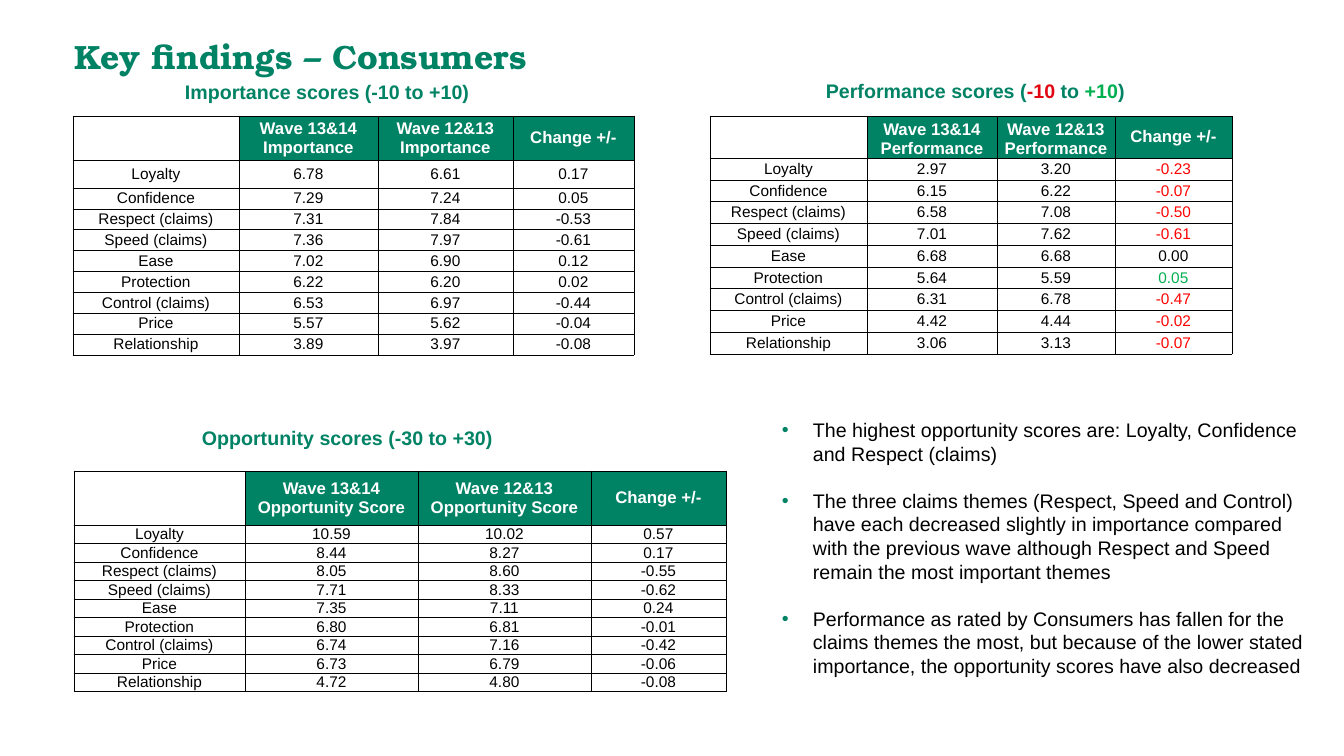
from pptx import Presentation
from pptx.dml.color import RGBColor
from pptx.enum.text import MSO_ANCHOR as Anchor, PP_ALIGN as Align
from pptx.oxml.ns import qn
from pptx.util import Pt
from lxml.etree import SubElement

COLOURS = {
    "brand": "008265", "header_text": "FFFFFF", "body": "000000",
    "fall": "FF0000", "rise": "00B050", "minimum": "E20613",
}

THEMES = ["Loyalty", "Confidence", "Respect (claims)", "Speed (claims)", "Ease",
          "Protection", "Control (claims)", "Price", "Relationship"]

# One line per theme: latest wave, previous wave, change
IMPORTANCE = [
    ("6.78", "6.61", "0.17"), ("7.29", "7.24", "0.05"), ("7.31", "7.84", "-0.53"),
    ("7.36", "7.97", "-0.61"), ("7.02", "6.90", "0.12"), ("6.22", "6.20", "0.02"),
    ("6.53", "6.97", "-0.44"), ("5.57", "5.62", "-0.04"), ("3.89", "3.97", "-0.08"),
]
PERFORMANCE = [
    ("2.97", "3.20", "-0.23"), ("6.15", "6.22", "-0.07"), ("6.58", "7.08", "-0.50"),
    ("7.01", "7.62", "-0.61"), ("6.68", "6.68", "0.00"), ("5.64", "5.59", "0.05"),
    ("6.31", "6.78", "-0.47"), ("4.42", "4.44", "-0.02"), ("3.06", "3.13", "-0.07"),
]
OPPORTUNITY = [
    ("10.59", "10.02", "0.57"), ("8.44", "8.27", "0.17"), ("8.05", "8.60", "-0.55"),
    ("7.71", "8.33", "-0.62"), ("7.35", "7.11", "0.24"), ("6.80", "6.81", "-0.01"),
    ("6.74", "7.16", "-0.42"), ("6.73", "6.79", "-0.06"), ("4.72", "4.80", "-0.08"),
]

FINDINGS = [
    "The highest opportunity scores are: Loyalty, Confidence and Respect (claims)",
    "The three claims themes (Respect, Speed and Control) have each decreased slightly "
    "in importance compared with the previous wave although Respect and Speed remain "
    "the most important themes",
    "Performance as rated by Consumers has fallen for the claims themes the most, but "
    "because of the lower stated importance, the opportunity scores have also decreased",
]


def px(length):
    return round(length * 914400 / 100.8)


def colour(name):
    return RGBColor.from_string(COLOURS[name])


def style(font, size, shade, bold=False, face="Arial"):
    font.name, font.size, font.bold = face, Pt(size), bold
    font.color.rgb = colour(shade)


def add_box(slide, left, top, width, height):
    box = slide.shapes.add_textbox(px(left), px(top), px(width), px(height))
    return box.text_frame


def add_title(slide, text):
    title = add_box(slide, 74, 7, 797, 98)
    title.word_wrap = True
    title.vertical_anchor = Anchor.MIDDLE
    title.margin_left = title.margin_right = title.margin_top = title.margin_bottom = 0
    title.text = text
    style(title.paragraphs[0].font, 24, "brand", True, "TeX Gyre Bonum")


def add_heading(slide, left, top, width, *parts):
    """Each part is a (text, colour name) pair."""
    heading = add_box(slide, left, top, width, 34)
    heading.word_wrap = False
    line = heading.paragraphs[0]
    style(line.font, 14, "brand", True)
    for text, shade in parts:
        run = line.add_run()
        run.text = text
        if len(parts) > 1:
            style(run.font, 14, shade, True)


def add_borders(cell):
    properties = cell._tc.get_or_add_tcPr()
    for side in ("a:lnL", "a:lnR", "a:lnT", "a:lnB"):
        edge = SubElement(properties, qn(side), w=str(Pt(0.5)))
        fill = SubElement(edge, qn("a:solidFill"))
        SubElement(fill, qn("a:srgbClr"), val=COLOURS["body"])


def fill_cell(cell, text, size, shade, bold=False, anchor=Anchor.MIDDLE):
    add_borders(cell)
    if bold and text:
        cell.fill.solid()
        cell.fill.fore_color.rgb = colour("brand")
    else:
        cell.fill.background()
    cell.margin_left = cell.margin_right = px(1)
    cell.margin_top = cell.margin_bottom = 0
    cell.vertical_anchor = anchor
    cell.text = text
    line = cell.text_frame.paragraphs[0]
    line.alignment = Align.CENTER
    style(line.font, size, shade, bold)


def change_shade(change):
    if float(change) == 0:
        return "body"
    return "fall" if float(change) < 0 else "rise"


def add_scores(slide, left, top, widths, heights, measure, scores,
               wave_anchor=Anchor.MIDDLE, signal_change=False):
    """Heights are header, first theme, and all other themes together."""
    header, first, others = heights
    table = slide.shapes.add_table(len(THEMES) + 1, len(widths), px(left), px(top),
                                   px(sum(widths)), px(sum(heights))).table
    table.first_row = table.horz_banding = False
    for column, width in zip(table.columns, widths):
        column.width = px(width)
    other = others / (len(THEMES) - 1)
    for row, height in zip(table.rows, [header, first] + [other] * (len(THEMES) - 1)):
        row.height = px(height)

    labels = ["", f"Wave 13&14 {measure}", f"Wave 12&13 {measure}", "Change +/-"]
    for c, label in enumerate(labels):
        anchor = wave_anchor if c in (1, 2) else Anchor.MIDDLE
        fill_cell(table.cell(0, c), label, 12, "header_text", True, anchor)
    for r, (theme, values) in enumerate(zip(THEMES, scores), 1):
        for c, text in enumerate((theme, *values)):
            signalled = signal_change and c == 3
            fill_cell(table.cell(r, c), text, 11,
                      change_shade(text) if signalled else "body")


def add_findings(slide):
    findings = add_box(slide, 747, 413, 583, 271)
    findings.word_wrap = True
    for i, text in enumerate(FINDINGS):
        finding = findings.paragraphs[0] if i == 0 else findings.add_paragraph()
        finding.text = text
        properties = finding._p.get_or_add_pPr()
        properties.set("marL", str(px(56)))
        properties.set("indent", str(px(-31)))
        bullet_colour = SubElement(properties, qn("a:buClr"))
        SubElement(bullet_colour, qn("a:srgbClr"), val=COLOURS["brand"])
        SubElement(properties, qn("a:buFont"), typeface="Arial")
        SubElement(properties, qn("a:buChar"), char="•")
        if i:
            finding.space_before = Pt(17)
        style(finding.font, 14, "body")


def main():
    deck = Presentation()
    deck.slide_width, deck.slide_height = px(1344), px(756)
    slide = deck.slides.add_slide(deck.slide_layouts[6])

    add_title(slide, "Key findings – Consumers")

    # Score tables
    add_scores(slide, 73, 116, (166, 139, 135, 121), (44, 28, 167),
               "Importance", IMPORTANCE)
    add_scores(slide, 710, 116, (157, 130, 118, 117), (42, 22, 174),
               "Performance", PERFORMANCE, Anchor.BOTTOM, True)
    add_scores(slide, 74, 471, (171, 173, 173, 135), (54, 18, 146),
               "Opportunity Score", OPPORTUNITY)

    add_findings(slide)

    # Table headings
    add_heading(slide, 175, 75, 316, ("Importance scores (-10 to +10)", "brand"))
    add_heading(slide, 816, 74, 332, ("Performance scores (", "brand"),
                ("-10 ", "minimum"), ("to ", "brand"), ("+10", "rise"), (")", "brand"))
    add_heading(slide, 192, 421, 318, ("Opportunity scores (-30 to +30)", "brand"))

    deck.save("out.pptx")


if __name__ == "__main__":
    main()
